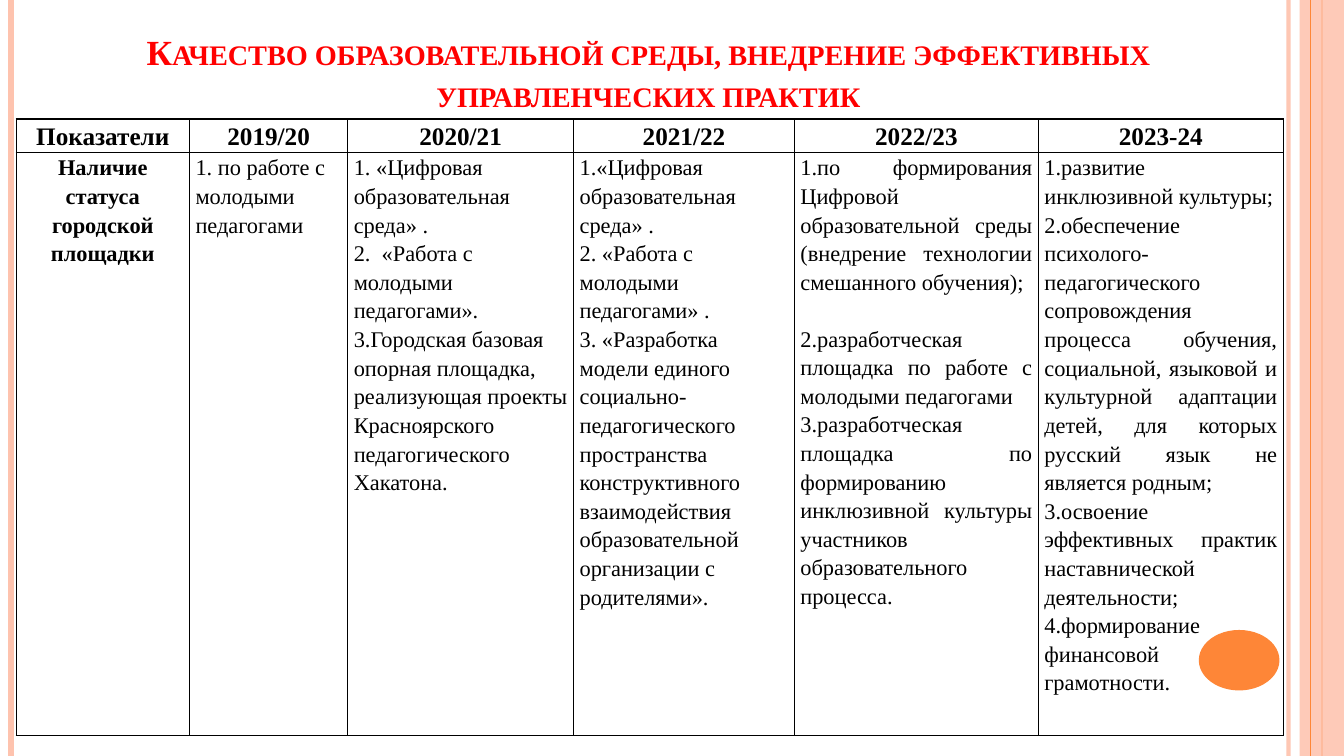
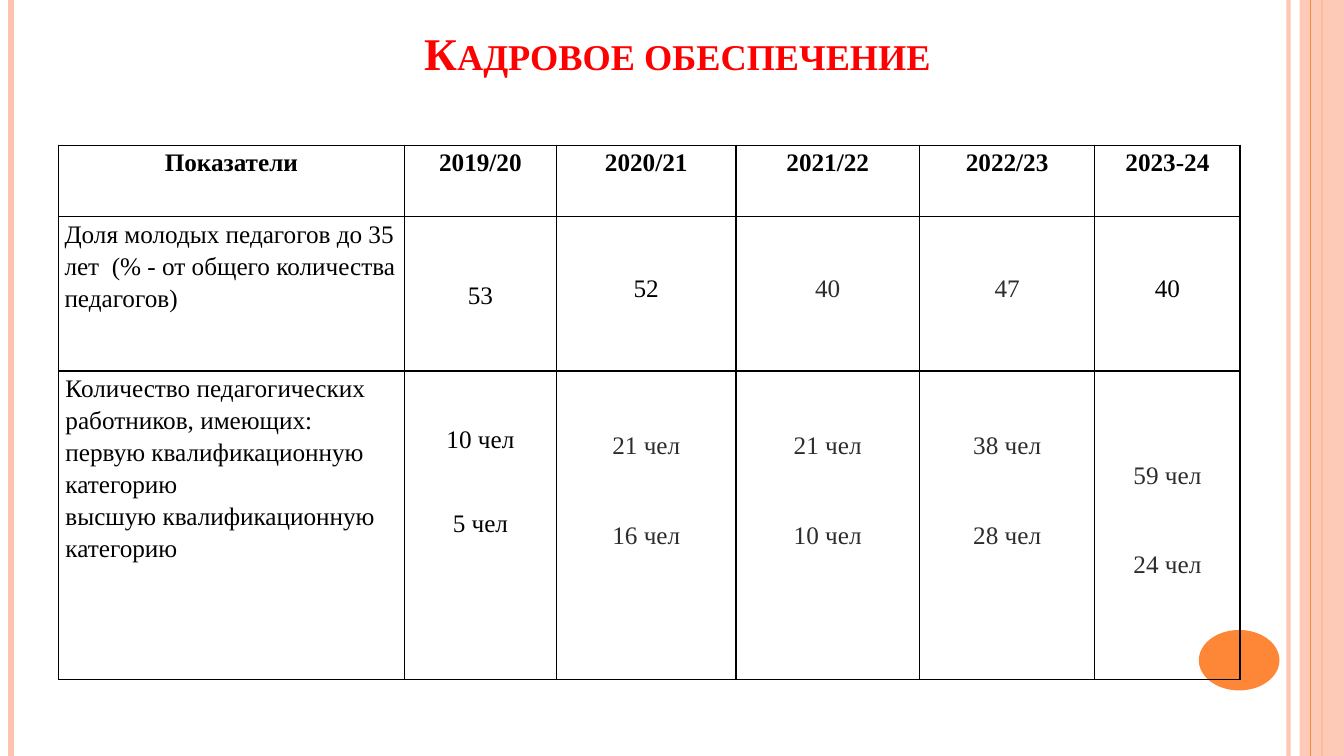
"""Build two slides on a school's educational practices and teaching staff."""
from lxml.etree import SubElement
from pptx import Presentation
from pptx.dml.color import RGBColor
from pptx.enum.shapes import MSO_CONNECTOR as Connector, MSO_SHAPE as Preset
from pptx.enum.text import MSO_ANCHOR as Anchor, MSO_AUTO_SIZE as AutoSize, PP_ALIGN as Align
from pptx.oxml.ns import qn
from pptx.util import Emu, Pt

PX = 9144
SLIDE_WIDTH, SLIDE_HEIGHT = 1333, 750
NO_TABLE_STYLE = "{2D5ABB26-0587-4C30-8999-92F81FD0307C}"
THEME = {
    "font": "Times New Roman",
    "title": "FF0000",
    "text": "000000",
    "soft_text": "2C2D2E",
    "border": "000000",
    "peach": "FEC3AE",
    "orange": "FE8637",
    "body_size": 18,
    "list_size": 16,
}

RULES = [
    (1278, "peach", 3, 93),
    (11, "peach", 4.5, 100),
    (1311, "orange", 1.5, 100),
    (1300, "orange", 0.75, 100),
]
BAND = (1289, 0, 44, SLIDE_HEIGHT)
DISC = (1189, 625, 80, 60)

BASE = {
    "size": THEME["body_size"], "color": "text", "bold": False, "align": Align.LEFT,
    "spacing": 1.15, "anchor": Anchor.TOP, "top": 0, "second_gap": 0,
}
LISTED = BASE | {"size": THEME["list_size"]}
JUSTIFIED = LISTED | {"align": Align.JUSTIFY}
NUMBER = BASE | {"align": Align.CENTER, "anchor": Anchor.MIDDLE}
TIGHT = NUMBER | {"spacing": Pt(12.7)}
COUNTS = TIGHT | {"color": "soft_text", "second_gap": 51}
STYLES = {
    "header": BASE | {"align": Align.CENTER, "bold": True},
    "status": LISTED | {"align": Align.CENTER, "bold": True},
    "body": BASE,
    "list": LISTED,
    "justified": JUSTIFIED,
    "justified_gap": JUSTIFIED | {"second_gap": 20},
    "number": NUMBER,
    "tight": TIGHT,
    "tight_soft": TIGHT | {"color": "soft_text"},
    "first_counts": NUMBER | {"spacing": 1.0, "anchor": Anchor.TOP, "top": 55, "second_gap": 40},
    "counts": COUNTS | {"anchor": Anchor.TOP, "top": 71},
    "middle_counts": COUNTS,
}

HEADERS = [("header", text) for text in
           ("Показатели", "2019/20", "2020/21", "2021/22", "2022/23", "2023-24")]
SLIDES = [
    {
        "title": "Качество образовательной среды, внедрение эффективных управленческих практик",
        "title_box": (37, 27, 1212, 92),
        "title_size": 25.2,
        "table_at": (16, 118),
        "columns": [172, 157, 224, 219, 242, 243],
        "rows": [
            (33, 6, HEADERS),
            (579, 6, [
                ("status", "Наличие статуса городской площадки"),
                ("list", "1. по работе с молодыми педагогами"),
                ("list", "1. «Цифровая образовательная среда» .",
                 "2.  «Работа с молодыми педагогами».",
                 "3.Городская базовая опорная площадка, реализующая проекты "
                 "Красноярского педагогического Хакатона."),
                ("list", "1.«Цифровая образовательная среда» .",
                 "2. «Работа с молодыми педагогами» .",
                 "3. «Разработка модели единого социально-педагогического пространства "
                 "конструктивного взаимодействия образовательной организации с родителями»."),
                ("justified_gap",
                 "1.по формирования Цифровой образовательной среды "
                 "(внедрение технологии смешанного обучения);",
                 "2.разработческая площадка по работе с молодыми педагогами",
                 "3.разработческая площадка по формированию инклюзивной культуры "
                 "участников образовательного процесса."),
                ("justified", "1.развитие инклюзивной культуры;",
                 "2.обеспечение психолого-педагогического сопровождения процесса обучения, "
                 "социальной, языковой и культурной адаптации детей, для которых русский язык "
                 "не является родным;",
                 "3.освоение эффективных практик наставнической деятельности;",
                 "4.формирование финансовой грамотности."),
            ]),
        ],
    },
    {
        "title": "Кадровое обеспечение",
        "title_box": (74, 30, 1196, 54),
        "title_size": 32.4,
        "table_at": (58, 144),
        "columns": [343, 151, 178, 182, 174, 144],
        "rows": [
            (71, 6, HEADERS),
            (153, 6, [
                ("body", "Доля молодых педагогов до 35 лет  (% - от общего количества педагогов)"),
                ("number", "53"),
                ("tight", "52"),
                ("tight_soft", "40"),
                ("tight_soft", "47"),
                ("tight", "40"),
            ]),
            (306, 7, [
                ("body", "Количество педагогических работников, имеющих:",
                 "первую квалификационную категорию", "высшую квалификационную категорию"),
                ("first_counts", "10 чел", "5 чел"),
                ("counts", "21 чел", "16 чел"),
                ("counts", "21 чел", "10 чел"),
                ("counts", "38 чел", "28 чел"),
                ("middle_counts", "59 чел", "24 чел"),
            ]),
        ],
    },
]


def px(value):
    return Emu(value * PX)


def color(name):
    return RGBColor.from_string(THEME[name])


def apply(target, **formats):
    for name, value in formats.items():
        setattr(target, name, value)


def set_alpha(shape, percent):
    for element in shape.element.spPr.iter(qn("a:srgbClr")):
        SubElement(element, qn("a:alpha"), val=str(percent * 1000))


def add_rule(slide, x, color_name, width, alpha):
    rule = slide.shapes.add_connector(Connector.STRAIGHT, px(x), 0, px(x), px(SLIDE_HEIGHT))
    rule.line.color.rgb = color(color_name)
    rule.line.width = Pt(width)
    set_alpha(rule, alpha)
    SubElement(rule.element.spPr, qn("a:effectLst"))
    return rule


def add_filled(slide, preset, box, color_name, alpha=100):
    shape = slide.shapes.add_shape(preset, *map(px, box))
    shape.shadow.inherit = False
    shape.fill.solid()
    shape.fill.fore_color.rgb = color(color_name)
    shape.line.fill.background()
    set_alpha(shape, alpha)
    return shape


def decorate_layout(layout, slide):
    shapes = [add_rule(slide, *rule) for rule in RULES]
    shapes.insert(3, add_filled(slide, Preset.RECTANGLE, BAND, "peach", 87))
    shapes.append(add_filled(slide, Preset.OVAL, DISC, "orange"))
    for shape_id, shape in enumerate(shapes, 101):
        shape.element.xpath(".//p:cNvPr")[0].set("id", str(shape_id))
        layout.shapes.element.append(shape.element)


def format_font(font, size, color_name, bold):
    apply(font, name=THEME["font"], size=Pt(size), bold=bold)
    font.color.rgb = color(color_name)


def add_title(slide, content):
    title = slide.shapes.title
    apply(title, **dict(zip(("left", "top", "width", "height"), map(px, content["title_box"]))))
    frame = title.text_frame
    apply(frame, word_wrap=True, auto_size=AutoSize.NONE, vertical_anchor=Anchor.BOTTOM)
    paragraph = frame.paragraphs[0]
    paragraph.alignment = Align.CENTER
    run = paragraph.add_run()
    run.text = content["title"]
    format_font(run.font, content["title_size"], "title", True)
    run.font._element.set("cap", "small")


def add_borders(cell):
    properties = cell._tc.get_or_add_tcPr()
    for side in ("lnL", "lnR", "lnT", "lnB"):
        line = SubElement(properties, qn(f"a:{side}"), w=str(Pt(1)))
        fill = SubElement(line, qn("a:solidFill"))
        SubElement(fill, qn("a:srgbClr"), val=THEME["border"])


def fill_cell(cell, inset, style_name, *texts):
    style = STYLES[style_name]
    apply(cell, margin_left=px(inset), margin_right=px(inset), margin_top=px(style["top"]),
          margin_bottom=0, vertical_anchor=style["anchor"])
    add_borders(cell)
    cell.fill.background()
    frame = cell.text_frame
    for index, text in enumerate(texts):
        paragraph = frame.add_paragraph() if index else frame.paragraphs[0]
        apply(paragraph, alignment=style["align"], line_spacing=style["spacing"])
        if index == 1:
            paragraph.space_before = Pt(style["second_gap"])
        run = paragraph.add_run()
        run.text = text
        format_font(run.font, style["size"], style["color"], style["bold"])


def add_grid(slide, content):
    columns, rows = content["columns"], content["rows"]
    size = (sum(columns), sum(height for height, _, _ in rows))
    frame = slide.shapes.add_table(len(rows), len(columns), *map(px, content["table_at"] + size))
    frame.element.xpath(".//a:tableStyleId")[0].text = NO_TABLE_STYLE
    table = frame.table
    apply(table, first_row=False, horz_banding=False)
    for column, width in zip(table.columns, columns):
        column.width = px(width)
    for row, (height, inset, cells) in zip(table.rows, rows):
        row.height = px(height)
        for cell, cell_content in zip(row.cells, cells):
            fill_cell(cell, inset, *cell_content)


def main():
    presentation = Presentation()
    apply(presentation, slide_width=px(SLIDE_WIDTH), slide_height=px(SLIDE_HEIGHT))
    layout = presentation.slide_layouts[5]
    for index, content in enumerate(SLIDES):
        slide = presentation.slides.add_slide(layout)
        if index == 0:
            decorate_layout(layout, slide)
        add_title(slide, content)
        add_grid(slide, content)
    presentation.save("out.pptx")


if __name__ == "__main__":
    main()
